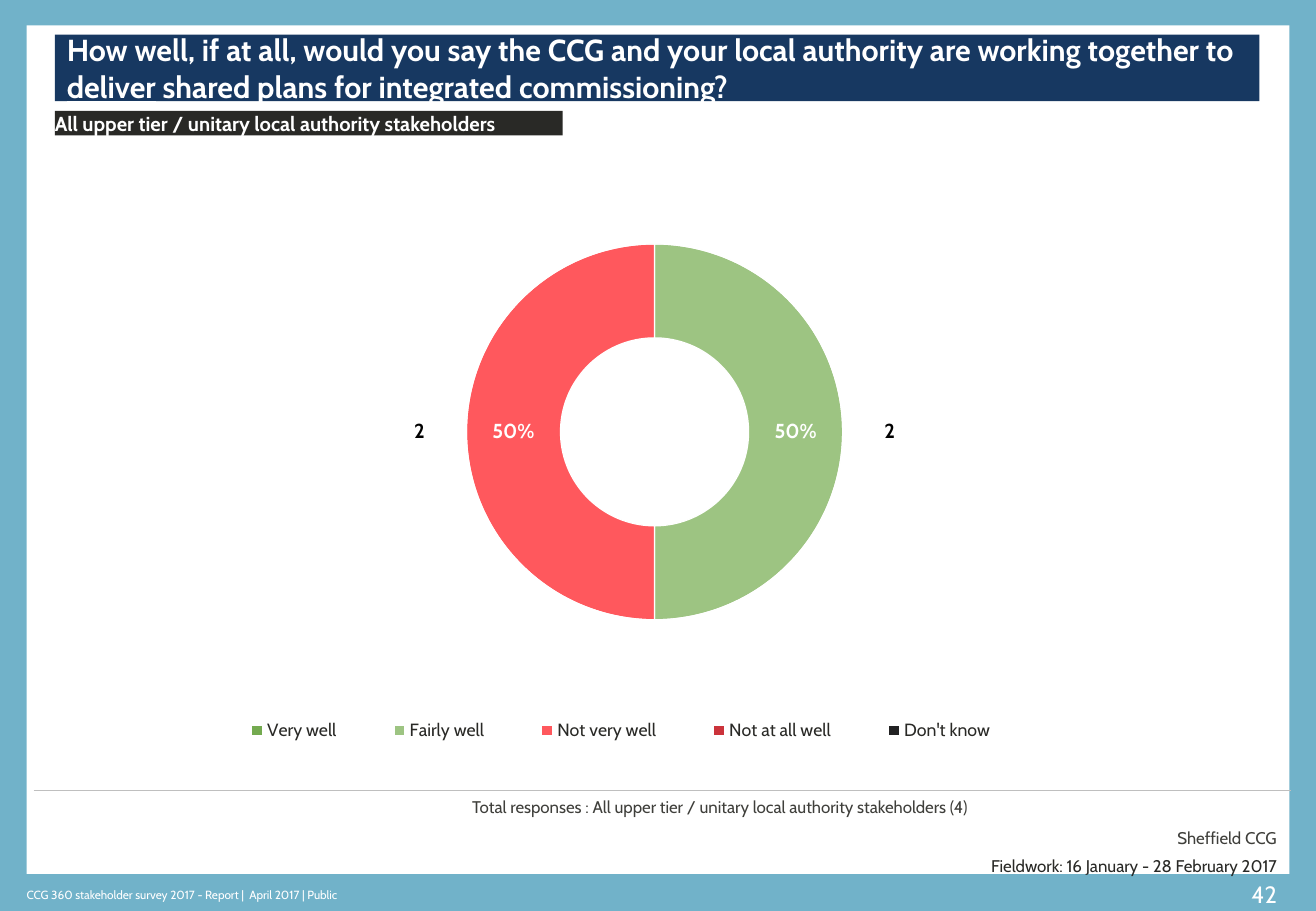
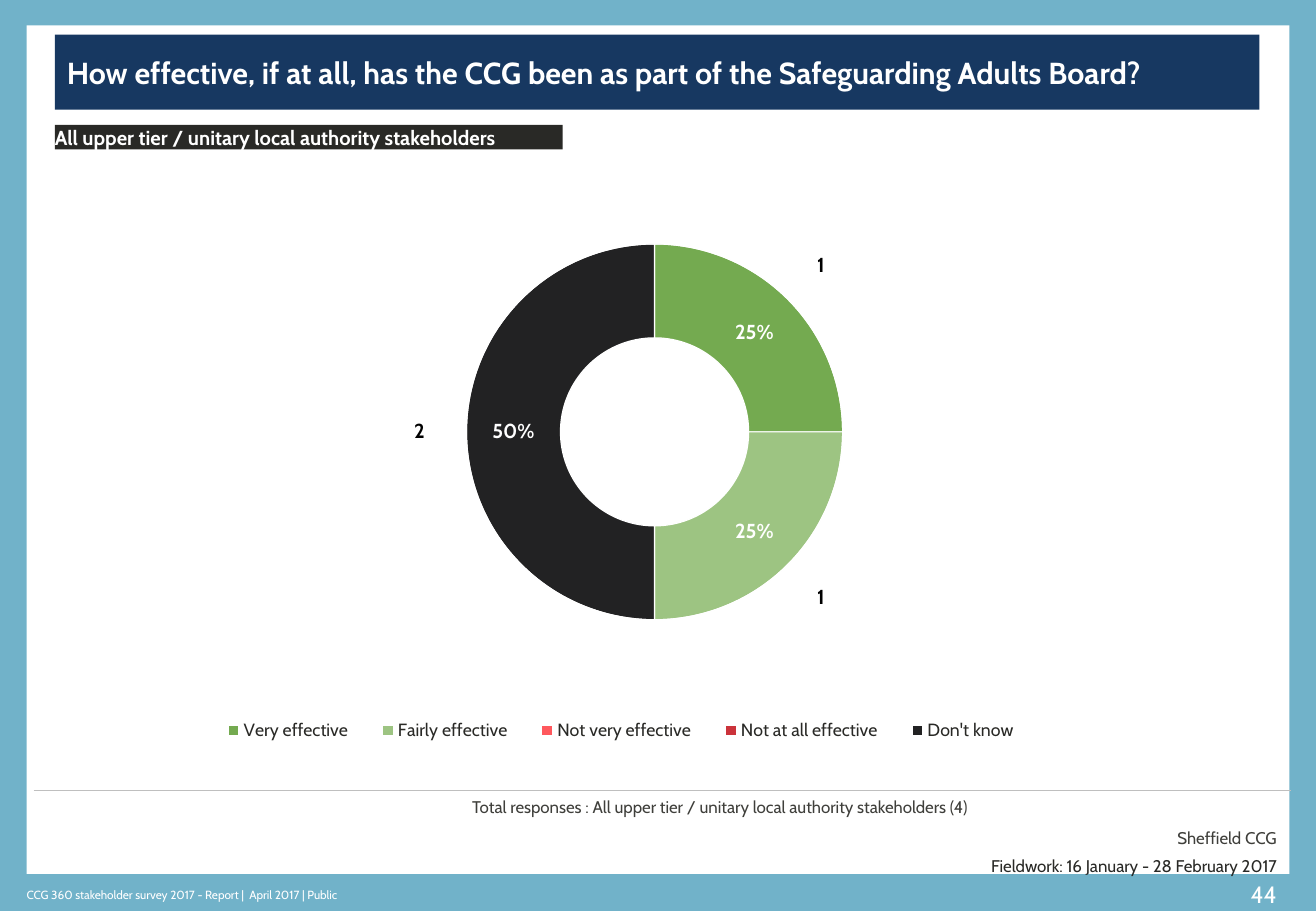
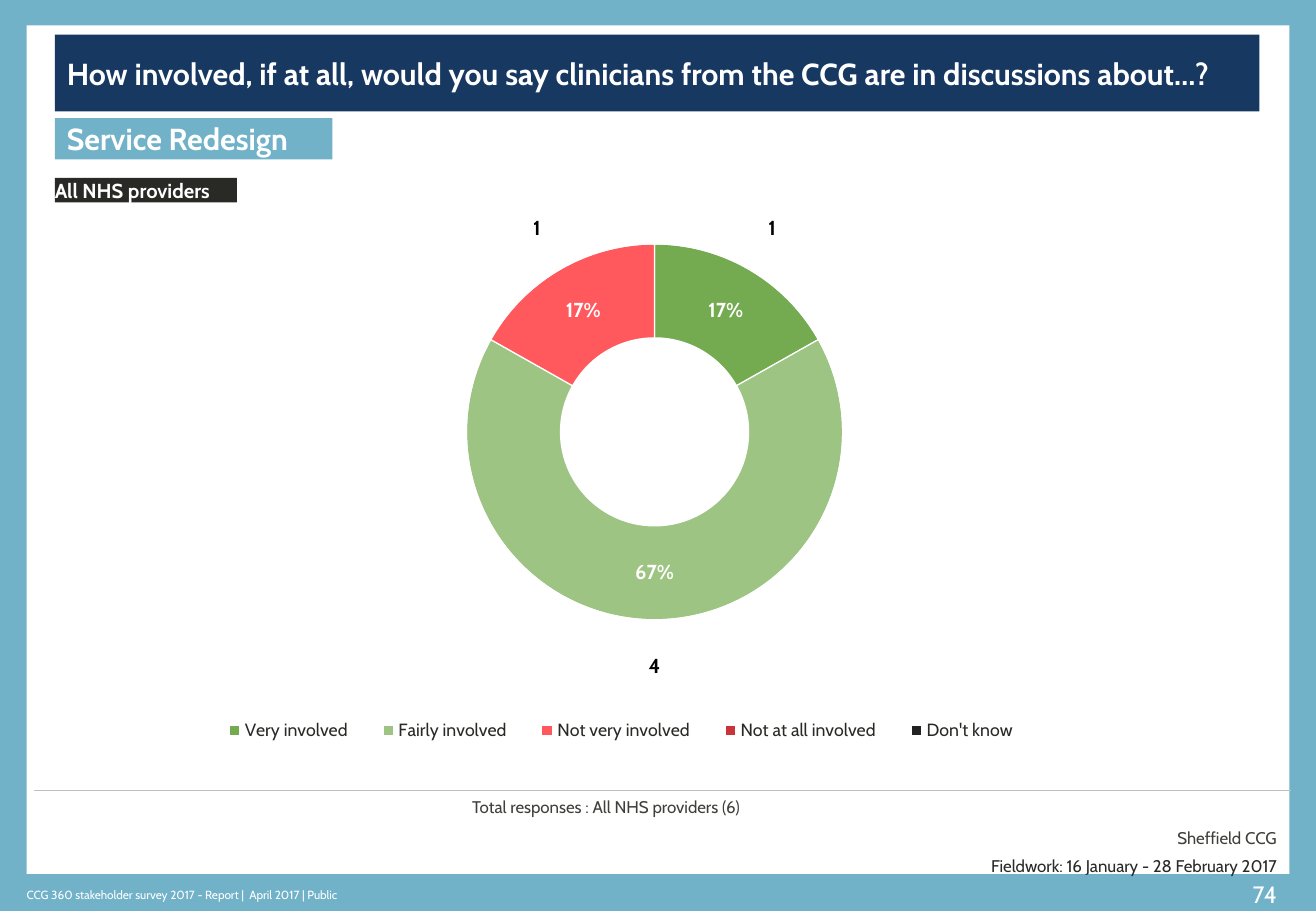
from pptx import Presentation
from pptx.chart.data import CategoryChartData
from pptx.dml.color import RGBColor
from pptx.enum.chart import XL_CHART_TYPE, XL_LEGEND_POSITION
from pptx.enum.shapes import MSO_CONNECTOR, MSO_SHAPE
from pptx.enum.text import MSO_ANCHOR, MSO_AUTO_SIZE, PP_ALIGN
from pptx.oxml import parse_xml
from pptx.oxml.ns import nsdecls, qn
from pptx.util import Pt

COLORS = {
    "frame": "71B2C9", "white": "FFFFFF", "navy": "173861", "ink": "292926",
    "grey": "3F3F3B", "rule": "BFBFBF", "black": "000000",
}
ANSWER_COLORS = ["74AA50", "9DC482", "FF585D", "CB333B", "222223"]
FONT = "Cabin"
LEFT = 32.5  # shared left edge of the title and tags

SLIDES = [
    {
        "number": "42",
        "title": ["How well, if at all, would you say the CCG and your local authority "
                  "are working together to ", "deliver",
                  " shared plans for integrated commissioning?"],
        "title_height": 39.5,
        "audience": "All upper tier / unitary local authority stakeholders",
        "tag": (65.75, 301), "topic": None, "scale": "well",
        "percents": [0, 50, 50, 0, 0], "counts": [0, 2, 2, 0, 0],
    },
    {
        "number": "44",
        "title": ["How effective, if at all, has the CCG been as part of the "
                  "Safeguarding Adults Board?"],
        "title_height": 44.5,
        "audience": "All upper tier / unitary local authority stakeholders",
        "tag": (74, 301), "topic": None, "scale": "effective",
        "percents": [25, 25, 0, 0, 50], "counts": [1, 1, 0, 0, 2],
    },
    {
        "number": "74",
        "title": ["How involved, if at all, would you say clinicians from the CCG "
                  "are in discussions about…?"],
        "title_height": 45.5,
        "audience": "All NHS providers",
        "tag": (105.5, 108), "topic": "Service Redesign", "scale": "involved",
        "percents": [17, 67, 17, 0, 0], "counts": [1, 4, 1, 0, 0],
    },
]


def add_text(s, box, runs, size, color, fill=None, bold=False, align=PP_ALIGN.LEFT,
             anchor=MSO_ANCHOR.TOP, inset=True):
    """Add a one-paragraph text box, or a filled rectangle when fill is given."""
    box = [Pt(v) for v in box]
    if fill:
        sp = s.shapes.add_shape(MSO_SHAPE.RECTANGLE, *box)
        sp.shadow.inherit = False
        sp.fill.solid()
        sp.fill.fore_color.rgb = RGBColor.from_string(COLORS[fill])
        sp.line.fill.background()
    else:
        sp = s.shapes.add_textbox(*box)
    tf = sp.text_frame
    tf.word_wrap = True
    tf.vertical_anchor = anchor
    if not inset:
        tf.margin_left = tf.margin_top = tf.margin_right = tf.margin_bottom = 0
    p = tf.paragraphs[0]
    p.alignment = align
    for text in runs:
        r = p.add_run()
        r.text = text
        r.font.name, r.font.size, r.font.bold = FONT, Pt(size), bold
        r.font.color.rgb = RGBColor.from_string(COLORS[color])
    return tf


def set_layout(parent, index, x, y, w, h, target=""):
    """Give a plot area or legend a fixed place, in fractions of the chart."""
    for old in parent.findall(qn("c:layout")):
        parent.remove(old)
    parent.insert(index, parse_xml(
        f'<c:layout {nsdecls("c")}><c:manualLayout>{target}'
        '<c:xMode val="edge"/><c:yMode val="edge"/>'
        f'<c:x val="{x}"/><c:y val="{y}"/><c:w val="{w}"/><c:h val="{h}"/>'
        '</c:manualLayout></c:layout>'))


prs = Presentation()
prs.slide_width, prs.slide_height = Pt(780), Pt(540)
background = prs.slide_master.background.fill
background.solid()
background.fore_color.rgb = RGBColor.from_string(COLORS["frame"])

for info in SLIDES:
    s = prs.slides.add_slide(prs.slide_layouts[6])

    # White page, page number, footer and rule
    add_text(s, (15.75, 15, 748.5, 503), [], 10, "ink", fill="white")
    tf = add_text(s, (732, 517.75, 32, 24.5), [info["number"]], 14, "white",
                  align=PP_ALIGN.RIGHT)
    tf.word_wrap = False
    tf.auto_size = MSO_AUTO_SIZE.SHAPE_TO_FIT_TEXT
    add_text(s, (15.75, 523, 385, 14.5),
             ["CCG 360 stakeholder survey 2017 - Report |  April 2017 | Public"],
             7, "white", anchor=MSO_ANCHOR.MIDDLE, inset=False)
    rule = s.shapes.add_connector(MSO_CONNECTOR.STRAIGHT, Pt(20), Pt(468.5), Pt(765), Pt(468.5))
    rule.line.color.rgb = RGBColor.from_string(COLORS["rule"])
    rule.line.width = Pt(0.25)
    rule._element.spPr.append(parse_xml(f'<a:effectLst {nsdecls("a")}/>'))

    # Title band
    tf = add_text(s, (LEFT, 20.5, 714, info["title_height"]), info["title"], 18, "white",
                  fill="navy", bold=True, anchor=MSO_ANCHOR.MIDDLE)
    for r in tf.paragraphs[0].runs[1:2]:
        r.font.underline = True

    # Doughnut: percentages on the inner ring, counts on an invisible outer ring
    scale = info["scale"]
    data = CategoryChartData()
    data.categories = [f"{word} {scale}" for word in
                       ("Very", "Fairly", "Not very", "Not at all")] + ["Don't know"]
    data.add_series("Series 1", info["percents"])
    data.add_series("Series 2", info["counts"])
    chart = s.shapes.add_chart(XL_CHART_TYPE.DOUGHNUT, Pt(0), Pt(88.5), Pt(780), Pt(380),
                               data).chart
    chart.has_title = False
    chart.font.name, chart.font.size = "Arial", Pt(18)
    chart.font.color.rgb = RGBColor.from_string(COLORS["ink"])
    plot = chart.plots[0]
    plot.vary_by_categories = True
    plot._element.find(qn("c:holeSize")).set("val", "38")
    set_layout(plot._element.getparent(), 0, 0.283, 0, 0.429, 0.881,
               '<c:layoutTarget val="inner"/>')

    # The number formats leave out the labels of empty answers
    for series, label_color, number_format in zip(
            plot.series, ("white", "black"), ('0"%";;', "0;;")):
        for i, color in enumerate(ANSWER_COLORS):
            fmt = series.points[i].format
            if label_color == "white":
                fmt.fill.solid()
                fmt.fill.fore_color.rgb = RGBColor.from_string(color)
            else:
                fmt.fill.background()
            fmt.line.color.rgb = RGBColor.from_string(COLORS["white"])
            fmt.line.width = Pt(0.75)
        labels = series.data_labels
        labels.show_value = True
        labels.show_percentage = False
        labels.number_format = number_format
        labels.number_format_is_linked = False
        labels.font.name, labels.font.size, labels.font.bold = FONT, Pt(12), True
        labels.font.color.rgb = RGBColor.from_string(COLORS[label_color])

    chart.has_legend = True
    legend = chart.legend
    legend.position = XL_LEGEND_POSITION.BOTTOM
    legend.include_in_layout = False
    legend.font.name, legend.font.size = FONT, Pt(10.5)
    legend.font.color.rgb = RGBColor.from_string(COLORS["ink"])
    set_layout(legend._element, 1, 0.152, 0.87, 0.64, 0.073)

    # Audience tag and topic
    top, width = info["tag"]
    add_text(s, (LEFT, top, width, 14.5), [info["audience"]], 12, "white", fill="ink",
             bold=True, inset=False)
    if info["topic"]:
        add_text(s, (LEFT, 70, 164.5, 24.5), [info["topic"]], 18, "white", fill="frame",
                 bold=True, anchor=MSO_ANCHOR.MIDDLE)

    # Base, area and fieldwork dates
    total = sum(info["counts"])
    tf = add_text(s, (272.75, 468.75, 491, 27.5),
                  [f"Total responses : {info['audience']} ({total})"], 10, "grey")
    p = tf.add_paragraph()
    p.text = "Sheffield CCG"
    p.alignment = PP_ALIGN.RIGHT
    p.space_before = Pt(6)
    font = p.runs[0].font
    font.name, font.size = FONT, Pt(10)
    font.color.rgb = RGBColor.from_string(COLORS["grey"])
    add_text(s, (548.75, 507.5, 208, 12), ["Fieldwork: 16 January - 28 February 2017"],
             10, "ink", align=PP_ALIGN.RIGHT, inset=False)

prs.save("out.pptx")
